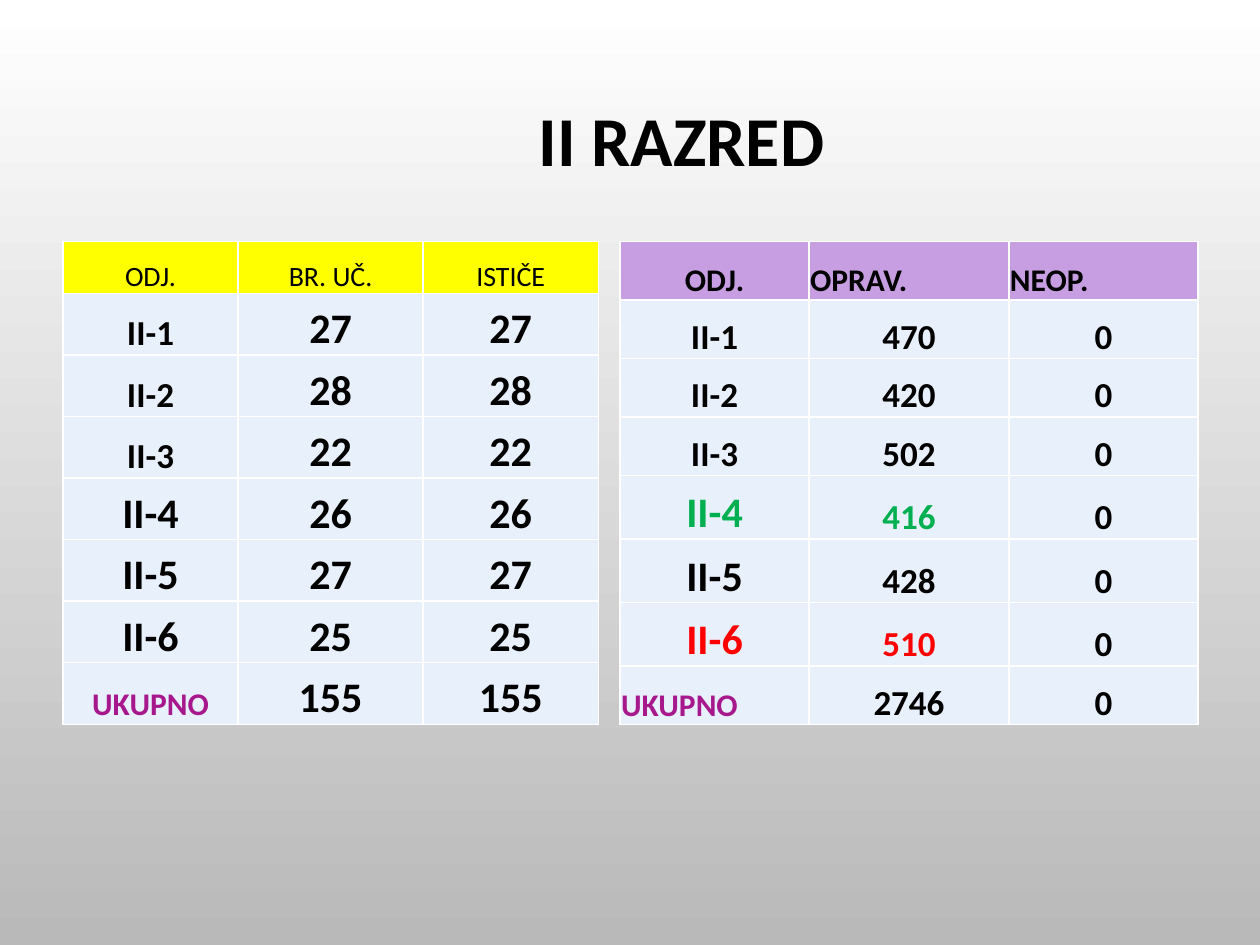
from dataclasses import dataclass

from lxml import etree
from pptx import Presentation
from pptx.dml.color import RGBColor
from pptx.enum.text import MSO_ANCHOR, MSO_AUTO_SIZE, PP_ALIGN
from pptx.oxml.ns import qn
from pptx.util import Cm, Pt

LEFT, CENTER = PP_ALIGN.LEFT, PP_ALIGN.CENTER
TOP, BOTTOM = MSO_ANCHOR.TOP, MSO_ANCHOR.BOTTOM
FIT_SHAPE = MSO_AUTO_SIZE.SHAPE_TO_FIT_TEXT
TITLE_ONLY = 5


@dataclass(frozen=True)
class Theme:
    font: str = "Calibri"
    text: str = "000000"
    total: str = "A8188D"
    low: str = "00B050"
    high: str = "FF0000"
    body: str = "E8F0FC"
    pupils_head: str = "FFFF00"
    absence_head: str = "C89EE3"
    border: str = "FFFFFF"
    back_top: str = "FFFFFF"
    back_bottom: str = "B9B9B9"
    title_size: int = 40
    large: int = 24
    medium: int = 20
    small: int = 18
    tiny: int = 16


THEME = Theme()


def write_text(tf, text, size, color=THEME.text, bold=True, align=CENTER):
    p = tf.paragraphs[0]
    p.alignment = align
    r = p.add_run()
    r.text = text
    r.font.name = THEME.font
    r.font.size = Pt(size)
    r.font.bold = bold
    r.font.color.rgb = RGBColor.from_string(color)
    return p


class SlideBuilder:
    """Holds the theme and the current slide and adds its elements."""

    def __init__(self, prs, theme):
        self.theme = theme
        self.s = prs.slides.add_slide(prs.slide_layouts[TITLE_ONLY])

    def background(self):
        fill = self.s.background.fill
        fill.gradient()
        fill.gradient_angle = 270
        colors = (self.theme.back_top, self.theme.back_bottom)
        for stop, color in zip(fill.gradient_stops, colors):
            stop.color.rgb = RGBColor.from_string(color)

    def title(self, text, left, top, width, height):
        sp = self.s.shapes.title
        sp.left, sp.top, sp.width, sp.height = map(Cm, (left, top, width, height))
        tf = sp.text_frame
        tf.word_wrap = True
        tf.auto_size = FIT_SHAPE
        tf.vertical_anchor = TOP
        p = write_text(tf, text, self.theme.title_size, align=LEFT)
        p.line_spacing = 1.07
        p.space_before = Pt(0)
        p.space_after = Pt(8)

    def table(self, left, top, widths, heights, rows, style):
        size = map(Cm, (left, top, sum(widths), sum(heights)))
        tbl = self.s.shapes.add_table(len(rows), len(widths), *size).table
        for column, width in zip(tbl.columns, widths):
            column.width = Cm(width)
        for row, height in zip(tbl.rows, heights):
            row.height = Cm(height)
        for i, values in enumerate(rows):
            for j, value in enumerate(values):
                fill, text_format = style(i, j)
                self.cell(tbl.cell(i, j), value, fill, text_format)

    def cell(self, cell, text, fill, text_format):
        cell.margin_left = cell.margin_right = cell.margin_top = Cm(0.02)
        cell.margin_bottom = 0
        cell.vertical_anchor = BOTTOM
        tcPr = cell._tc.get_or_add_tcPr()
        for side in ("a:lnL", "a:lnR", "a:lnT", "a:lnB"):
            ln = etree.SubElement(tcPr, qn(side), w=str(Pt(1)))
            solid = etree.SubElement(ln, qn("a:solidFill"))
            etree.SubElement(solid, qn("a:srgbClr"), val=self.theme.border)
        cell.fill.solid()
        cell.fill.fore_color.rgb = RGBColor.from_string(fill)
        write_text(cell.text_frame, text, **text_format)


def class_size(i):
    if i == 7:
        return THEME.small
    return THEME.medium if i < 4 else THEME.large


def pupils_style(i, j):
    if i == 0:
        return THEME.pupils_head, {"size": THEME.tiny, "bold": False}
    color = THEME.total if (i, j) == (7, 0) else THEME.text
    size = THEME.large if j else class_size(i)
    return THEME.body, {"size": size, "color": color}


def absence_style(i, j):
    if i == 0:
        return THEME.absence_head, {"size": THEME.small, "align": LEFT if j else CENTER}
    if (i, j) == (7, 0):
        return THEME.body, {"size": THEME.small, "color": THEME.total, "align": LEFT}
    marks = {4: THEME.low, 6: THEME.high}
    color = marks.get(i, THEME.text) if j < 2 else THEME.text
    size = THEME.medium if j else class_size(i)
    return THEME.body, {"size": size, "color": color}


def main():
    prs = Presentation()
    prs.slide_width, prs.slide_height = Cm(25.4), Cm(19.05)
    labels = [f"II-{n}" for n in range(1, 7)] + ["UKUPNO"]
    pupils = ["27", "28", "22", "26", "27", "25", "155"]
    excused = ["470", "420", "502", "416", "428", "510", "2746"]

    slide = SlideBuilder(prs, THEME)
    slide.background()
    slide.title("II RAZRED", 10.6, 1.7, 7.2, 2.08)
    slide.table(
        1.27, 4.87, [3.53, 3.73, 3.53], [1.05] + [1.24] * 7,
        [("ODJ.", "BR. UČ.", "ISTIČE"), *zip(labels, pupils, pupils)],
        pupils_style,
    )
    slide.table(
        12.5, 4.87, [3.81, 4.03, 3.81], [1.18] * 4 + [1.28] * 3 + [1.18],
        [("ODJ.", "OPRAV.", "NEOP."), *zip(labels, excused, ["0"] * 7)],
        absence_style,
    )
    prs.save("out.pptx")


if __name__ == "__main__":
    main()
